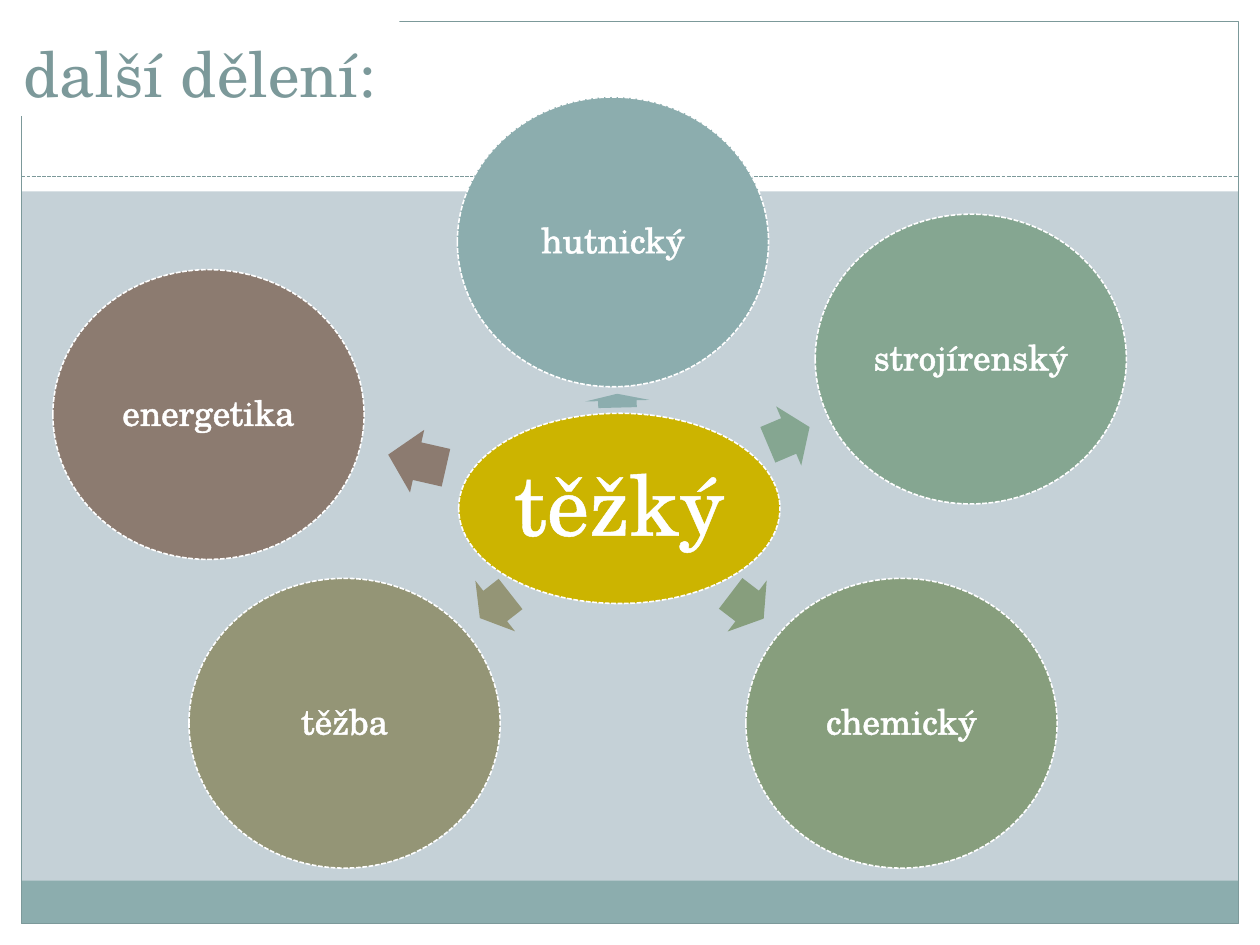
"""Build a slide showing the branches of heavy industry around a central ellipse."""
from lxml import etree
from pptx import Presentation
from pptx.dml.color import RGBColor
from pptx.enum.dml import MSO_LINE
from pptx.enum.shapes import MSO_CONNECTOR, MSO_SHAPE
from pptx.enum.text import MSO_ANCHOR, PP_ALIGN
from pptx.oxml.ns import qn
from pptx.util import Inches, Pt

RECTANGLE = MSO_SHAPE.RECTANGLE
OVAL = MSO_SHAPE.OVAL
ARROW = MSO_SHAPE.RIGHT_ARROW
DASH = MSO_LINE.SQUARE_DOT
STRAIGHT = MSO_CONNECTOR.STRAIGHT
CENTER = PP_ALIGN.CENTER
MIDDLE, BOTTOM = MSO_ANCHOR.MIDDLE, MSO_ANCHOR.BOTTOM

THEME = {
    "font": "TeX Gyre Schola",
    "background": "C5D1D7", "white": "FFFFFF", "accent": "7C999A",
    "band": "8CADAE", "hub": "CCB400",
    "title_size": 36, "hub_size": 48, "branch_size": 20,
    "frame_width": 0.75, "oval_width": 0.9, "outline_width": 1.45,
}

TITLE = "další dělení:"
HUB = "těžký"
BRANCHES = [
    {"text": "hutnický", "color": "8CADAE", "corner": (3.63, 0.77),
     "arrow_center": (4.9, 3.18), "arrow_length": 0.11, "angle": 268.6},
    {"text": "strojírenský", "color": "85A691", "corner": (6.47, 1.7),
     "arrow_center": (6.26, 3.46), "arrow_length": 0.36, "angle": 337},
    {"text": "chemický", "color": "879E7D", "corner": (5.92, 4.59),
     "arrow_center": (5.93, 4.81), "arrow_length": 0.33, "angle": 37.4},
    {"text": "těžba", "color": "949576", "corner": (1.5, 4.59),
     "arrow_center": (3.93, 4.81), "arrow_length": 0.31, "angle": 141.9},
    {"text": "energetika", "color": "8C7B70", "corner": (0.42, 2.14),
     "arrow_center": (3.31, 3.66), "arrow_length": 0.47, "angle": 192.8},
]

WIDTH, HEIGHT = 10, 7.5
MARGIN = 0.17
HEADER_HEIGHT = 1.52
RULE_TOP = 1.4
BAND_HEIGHT = 0.34
HUB_BOX = (3.64, 3.28, 2.55, 1.51)
BRANCH_SIZE = (2.47, 2.3)
ARROW_HEIGHT = 0.51
OVAL_INSET = 0.03


def rgb(name):
    return RGBColor.from_string(THEME.get(name, name))


def set_line(line, color, width, dash=None):
    line.color.rgb = rgb(color)
    line.width = Pt(width)
    if dash is not None:
        line.dash_style = dash


def add_shape(slide, kind, box, fill=None, line=None):
    shape = slide.shapes.add_shape(kind, *map(Inches, box))
    shape.shadow.inherit = False
    if fill:
        shape.fill.solid()
        shape.fill.fore_color.rgb = rgb(fill)
    else:
        shape.fill.background()
    if line:
        set_line(shape.line, *line)
    else:
        shape.line.fill.background()
    return shape


def outline_text(run, color, width):
    line = etree.Element(qn("a:ln"), w=str(Pt(width)))
    fill = etree.SubElement(line, qn("a:solidFill"))
    etree.SubElement(fill, qn("a:srgbClr"), val=THEME[color])
    run.font._element.insert(0, line)


def write_text(shape, text, *, size, color, anchor=MIDDLE, inset=None,
               spacing=None, outlined=False):
    frame = shape.text_frame
    frame.word_wrap = True
    frame.vertical_anchor = anchor
    if inset is not None:
        frame.margin_left = frame.margin_right = Inches(inset)
        frame.margin_top = frame.margin_bottom = Inches(inset)
    paragraph = frame.paragraphs[0]
    paragraph.alignment = CENTER
    paragraph.line_spacing = spacing
    run = paragraph.add_run()
    run.text = text
    run.font.name = THEME["font"]
    run.font.size = Pt(THEME[size])
    run.font.color.rgb = rgb(color)
    if outlined:
        outline_text(run, color, THEME["outline_width"])


def add_backdrop(slide):
    slide.background.fill.solid()
    slide.background.fill.fore_color.rgb = rgb("background")
    right, bottom = WIDTH - MARGIN, HEIGHT - MARGIN
    inner_width = WIDTH - 2 * MARGIN
    for box in [
        (0, bottom, WIDTH, MARGIN),
        (0, 0, WIDTH, HEADER_HEIGHT),
        (0, 0, MARGIN, HEIGHT),
        (right, 0, MARGIN, HEIGHT),
    ]:
        add_shape(slide, RECTANGLE, box, "white")
    add_shape(slide, RECTANGLE,
              (MARGIN, bottom - BAND_HEIGHT, inner_width, BAND_HEIGHT), "band")
    add_shape(slide, RECTANGLE,
              (MARGIN, MARGIN, inner_width, HEIGHT - 2 * MARGIN),
              line=("accent", THEME["frame_width"]))
    rule = slide.shapes.add_connector(
        STRAIGHT, *map(Inches, (MARGIN, RULE_TOP, right, RULE_TOP)))
    set_line(rule.line, "accent", THEME["frame_width"], DASH)
    etree.SubElement(rule._element.spPr, qn("a:effectLst"))


def add_oval(slide, text, box, fill, size):
    oval = add_shape(slide, OVAL, box, fill,
                     ("white", THEME["oval_width"], DASH))
    write_text(oval, text, size=size, color="white", inset=OVAL_INSET,
               spacing=0.9, outlined=True)


def add_branch(slide, branch):
    center_x, center_y = branch["arrow_center"]
    length = branch["arrow_length"]
    box = (center_x - length / 2, center_y - ARROW_HEIGHT / 2,
           length, ARROW_HEIGHT)
    arrow = add_shape(slide, ARROW, box, branch["color"])
    arrow.adjustments[0], arrow.adjustments[1] = 0.6, 0.5
    arrow.rotation = branch["angle"]
    add_oval(slide, branch["text"], branch["corner"] + BRANCH_SIZE,
             branch["color"], "branch_size")


def main():
    presentation = Presentation()
    presentation.slide_width = Inches(WIDTH)
    presentation.slide_height = Inches(HEIGHT)
    slide = presentation.slides.add_slide(presentation.slide_layouts[6])
    add_backdrop(slide)
    title = add_shape(slide, RECTANGLE, (0, 0, 3.17, 0.92), "white")
    write_text(title, TITLE, size="title_size", color="accent", anchor=BOTTOM)
    add_oval(slide, HUB, HUB_BOX, "hub", "hub_size")
    for branch in BRANCHES:
        add_branch(slide, branch)
    presentation.save("out.pptx")


if __name__ == "__main__":
    main()
